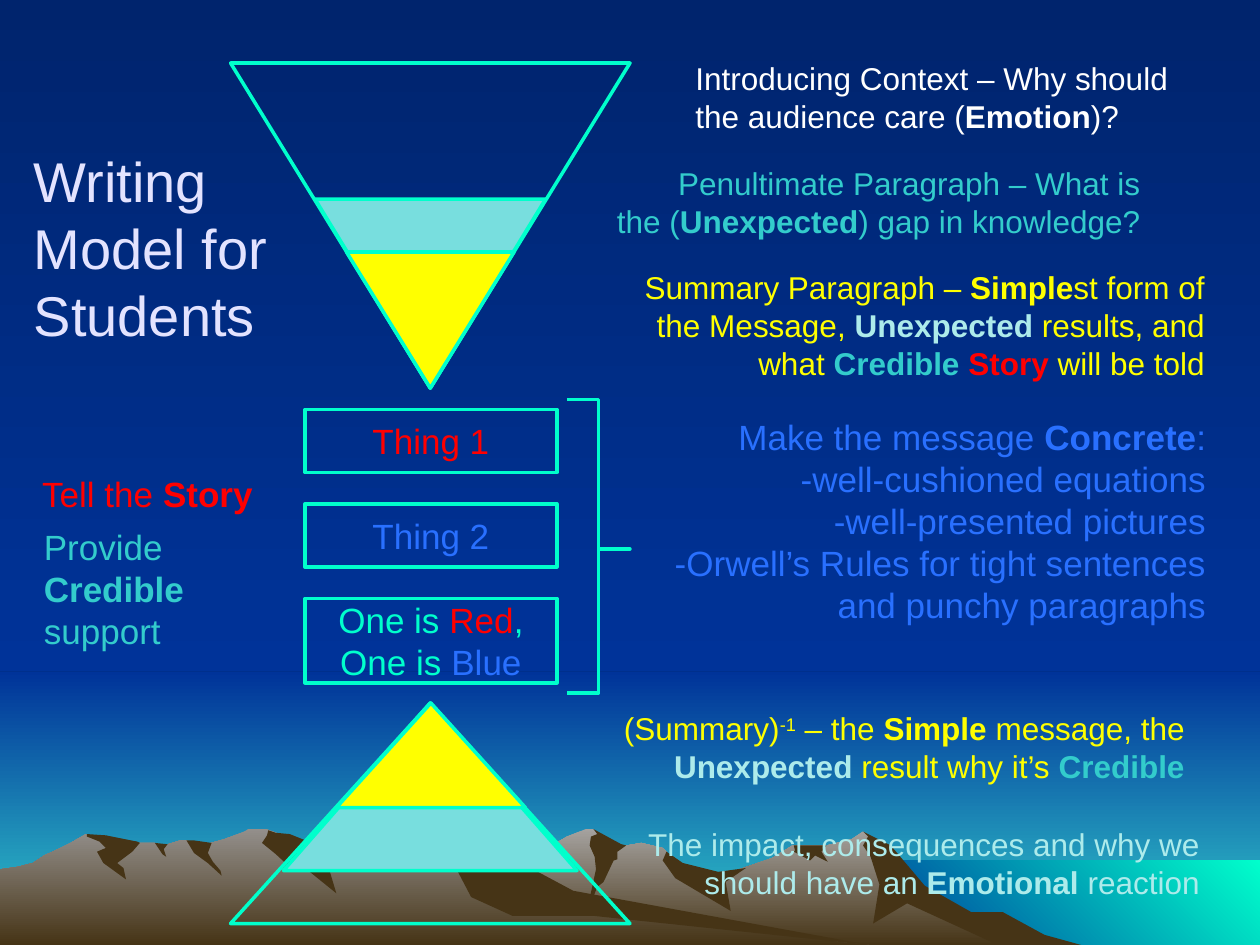
"""Build the writing model slide: an hourglass of text parts over a mountain view."""
from pptx import Presentation
from pptx.dml.color import RGBColor
from pptx.enum.shapes import MSO_SHAPE
from pptx.enum.text import MSO_ANCHOR, MSO_AUTO_SIZE, PP_ALIGN
from pptx.util import Inches, Pt

HUES = {
    "night": "00246D", "blue": "003399", "teal": "33CCCC", "mint": "00FFCC",
    "stone": "A5A29F", "rock": "938F8B", "earth": "463416", "aqua": "78DEDE",
    "gold": "FFFF00", "red": "FF0000", "sky": "2970FF", "pale": "ADEBEB",
    "white": "FFFFFF", "lilac": "E3E3FF",
}
LEFT, MID, RIGHT = PP_ALIGN.LEFT, PP_ALIGN.CENTER, PP_ALIGN.RIGHT
FACE = {"name": "Arial"}
TOP = {"word_wrap": True, "vertical_anchor": MSO_ANCHOR.TOP,
       "auto_size": MSO_AUTO_SIZE.SHAPE_TO_FIT_TEXT}
FREE = {**TOP, "word_wrap": False}
CORE = {"word_wrap": True, "vertical_anchor": MSO_ANCHOR.MIDDLE}
HIGH = {**CORE, "margin_bottom": Inches(0.38)}

FRONT = [
    (802, 740, 778, 727, 764, 723, 723, 698, 702, 671, 685, 660, 676, 666, 656, 671,
     629, 671, 613, 681, 566, 697, 536, 690, 529, 676, 526, 673, 509, 669, 486, 673,
     474, 661, 471, 658, 465, 658, 450, 664, 438, 671, 430, 671, 418, 675, 405, 681,
     394, 685, 355, 698, 327, 709, 277, 739, 258, 750, 821, 750),
    (0, 750, 0, 690, 14, 688, 26, 685, 35, 679, 46, 674, 56, 669, 68, 662, 94, 671,
     111, 669, 123, 669, 130, 671, 143, 667, 148, 667, 160, 671, 178, 666, 194, 660,
     197, 658, 212, 658, 222, 662, 236, 681, 260, 676, 271, 682, 279, 681, 296, 676,
     318, 664, 323, 668, 327, 668, 331, 663, 354, 665, 432, 712, 667, 748, 690, 750),
]
SHADE = [
    (796, 724, 771, 724, 734, 703, 707, 671, 685, 660, 689, 664, 685, 671, 691, 680,
     698, 702, 693, 733, 720, 717, 792, 750, 858, 750, 829, 742),
    (471, 658, 474, 662, 469, 664, 468, 671, 472, 680, 473, 690, 465, 727, 474, 704,
     479, 700, 487, 683, 490, 682, 490, 676, 497, 671, 493, 670),
    (529, 676, 526, 683, 536, 697, 580, 723, 576, 700, 592, 689, 570, 692, 542, 685),
    (650, 671, 630, 671, 631, 675, 630, 676, 643, 683, 647, 679, 657, 684, 652, 676,
     656, 671),
    (433, 677, 432, 671, 439, 670, 437, 673, 439, 679, 434, 684),
]
CLIFF = [
    (212, 663, 208, 669, 219, 678, 232, 690, 241, 688, 267, 709, 261, 689, 271, 682,
     260, 674, 245, 668, 230, 662, 219, 661, 213, 659),
    (370, 668, 354, 665, 344, 665, 339, 669, 337, 687, 348, 683, 353, 688, 363, 691,
     374, 712, 407, 727, 472, 727, 690, 750, 455, 707, 427, 692, 411, 684, 401, 681),
    (318, 667, 320, 666, 318, 664, 323, 667, 327, 667, 330, 674, 322, 669, 319, 672),
    (154, 667, 168, 669, 165, 677, 169, 684, 175, 691, 176, 695, 165, 685, 154, 677,
     148, 667),
    (133, 670, 130, 674, 132, 680, 129, 678, 123, 669),
    (109, 668, 111, 669, 105, 676, 93, 685, 98, 689, 100, 698, 82, 685, 77, 676,
     84, 673, 79, 668, 69, 664, 69, 662, 84, 663, 94, 665),
]


def tint(name):
    """Return the named colour."""
    return RGBColor.from_string(HUES[name])


def put(item, vals):
    """Set each format value on the item."""
    for key, val in vals.items():
        setattr(item, key, val)


def fit(box, part):
    """Return the part in lengths, moved to the corner of the box."""
    x, y, w, h = part
    return [Inches(n) for n in (box[0] + x, box[1] + y, w, h)]


def blend(fill, first, last, turn=270):
    """Fill with a gradient of two colours."""
    fill.gradient()
    fill.gradient_angle = turn
    for stop, name in zip(fill.gradient_stops, (first, last)):
        stop.color.rgb = tint(name)


def ridge(slide, pts, *names):
    """Draw a closed outline, given in hundredths of an inch."""
    pairs = list(zip(pts[::2], pts[1::2]))
    pen = slide.shapes.build_freeform(*pairs[0], scale=Inches(0.01))
    pen.add_line_segments(pairs[1:], close=True)
    shape = pen.convert_to_shape()
    shape.shadow.inherit = False
    shape.line.fill.background()
    if len(names) == 2:
        blend(shape.fill, *names)
    else:
        shape.fill.solid()
        shape.fill.fore_color.rgb = tint(*names)


def scene(slide, box):
    """Draw the sky, the sea and the mountains."""
    blend(slide.background.fill, "night", "blue")
    for part, first, last, turn in (
            ((0, 5.33, 10, 2.17), "blue", "teal", 270),
            ((0, 0, 10, 5.33), "night", "blue", 270),
            ((6.83, 6.83, 3.17, 0.67), "blue", "mint", 45)):
        shape = slide.shapes.add_shape(MSO_SHAPE.RECTANGLE, *fit(box, part))
        shape.shadow.inherit = False
        shape.line.fill.background()
        blend(shape.fill, first, last, turn)
    for front, top, dark in zip(FRONT, ("stone", "rock"), (SHADE, CLIFF)):
        ridge(slide, front, top, "earth")
        for pts in dark:
            ridge(slide, pts, "earth")


def trim(slide, kind, box, part, fill=None, turn=0):
    """Add a shape with a mint outline."""
    shape = slide.shapes.add_shape(kind, *fit(box, part))
    shape.shadow.inherit = False
    shape.rotation = turn
    put(shape.line, {"width": Pt(2)})
    shape.line.color.rgb = tint("mint")
    if fill:
        shape.fill.solid()
        shape.fill.fore_color.rgb = tint(fill)
    else:
        shape.fill.background()
    return shape


def write(frame, paras, size, side, form):
    """Fill the frame with paragraphs of (text, colour, bold) runs."""
    put(frame, form)
    for i, runs in enumerate(paras):
        para = frame.add_paragraph() if i else frame.paragraphs[0]
        para.alignment = side
        for text, name, *bold in runs:
            run = para.add_run()
            run.text = text
            put(run.font, {**FACE, "size": Pt(size), "bold": bool(bold)})
            run.font.color.rgb = tint(name)
            if text == "-1":
                run.font._element.set("baseline", "30000")


def glass(slide, box):
    """Draw the two cones, the three things and the brace."""
    for part, fill, turn in (
            ((0.42, 5.08, 2.33, 1.33), "aqua", 0),
            ((0, 5.08, 3.17, 1.75), None, 0),
            ((0, 0, 3.17, 2.58), None, 180),
            ((0.67, 1.08, 1.83, 1.5), "aqua", 180),
            ((0.92, 1.5, 1.33, 1.08), "gold", 180),
            ((0.84, 5.08, 1.5, 0.83), "gold", 0)):
        trim(slide, MSO_SHAPE.ISOSCELES_TRIANGLE, box, part, fill, turn)
    things = (
        (0.5, [("Thing 1", "red")]),
        (0.5, [("Thing 2", "sky")]),
        (0.67, [("One is ", "mint"), ("Red", "red"), (", One is ", "mint"),
                ("Blue", "sky")]))
    for i, (high, runs) in enumerate(things):
        part = (0.59, 2.75 + 0.75 * i, 2, high)
        shape = trim(slide, MSO_SHAPE.RECTANGLE, box, part)
        write(shape.text_frame, [runs], 20, MID, CORE)
    brace = trim(slide, MSO_SHAPE.RIGHT_BRACE, box, (2.67, 2.67, 0.5, 2.33))
    for i, val in enumerate((0, 0.51)):
        brace.adjustments[i] = val


def notes(slide, box, items):
    """Place each text at its part of the box."""
    for part, size, side, form, paras in items:
        note = slide.shapes.add_textbox(*fit(box, part))
        write(note.text_frame, paras, size, side, form)


SIDE = [
    ((0, 2.5, 2, 0.5), 20, MID, CORE, [[("Tell the ", "red"), ("Story", "red", 1)]]),
    ((0.08, 3.25, 3.33, 0.5), 20, LEFT, CORE,
     [[("Provide", "teal")], [("Credible", "teal", 1)], [("support", "teal")]]),
    ((0, 0, 2.83, 1.58), 32, LEFT, CORE,
     [[(line, "lilac")] for line in ("Writing", "Model for", "Students")]),
]
GUIDE = [
    ((0.5, 0.83, 4.4, 0.71), 18, RIGHT, FREE,
     [[("Penultimate Paragraph – What is", "teal")],
      [("the (", "teal"), ("Unexpected", "teal", 1), (") gap in knowledge?", "teal")]]),
    ((0.58, 1.66, 4.83, 1.01), 18, RIGHT, TOP,
     [[("Summary Paragraph – ", "gold"), ("Simple", "gold", 1),
       ("st form of the Message, ", "gold"), ("Unexpected ", "pale", 1),
       ("results, and what ", "gold"), ("Credible ", "teal", 1),
       ("Story ", "red", 1), ("will be told", "gold")]]),
    ((1.17, 0, 3.99, 0.71), 18, LEFT, FREE,
     [[("Introducing Context – Why should", "white")],
      [("the audience care (", "white"), ("Emotion", "white", 1), (")?", "white")]]),
    ((1, 2.75, 4.42, 2.25), 20, RIGHT, HIGH,
     [[("Make the message ", "sky"), ("Concrete", "sky", 1), (":", "sky")],
      [("-well-cushioned equations", "sky")], [("-well-presented pictures", "sky")],
      [("-Orwell’s Rules for tight sentences and punchy paragraphs", "sky")]]),
    ((0, 5.16, 5.25, 0.71), 18, RIGHT, TOP,
     [[("(Summary)", "gold"), ("-1", "gold"), (" – the ", "gold"),
       ("Simple", "gold", 1), (" message, the ", "gold"), ("Unexpected ", "pale", 1),
       ("result why it’s ", "gold"), ("Credible", "teal", 1)]]),
    ((0.75, 6.08, 4.62, 0.71), 18, RIGHT, FREE,
     [[("The impact, consequences and why we", "pale")],
      [("should have an", "pale"), (" Emotional ", "pale", 1), ("reaction", "pale")]]),
]


def main():
    """Build and save the slide."""
    deck = Presentation()
    put(deck, {"slide_width": Inches(10), "slide_height": Inches(7.5)})
    slide = deck.slides.add_slide(deck.slide_layouts[6])
    scene(slide, (0, 0))
    glass(slide, (1.83, 0.5))
    notes(slide, (0.17, 1.17), SIDE)
    notes(slide, (4.25, 0.42), GUIDE)
    deck.save("out.pptx")


if __name__ == "__main__":
    main()
